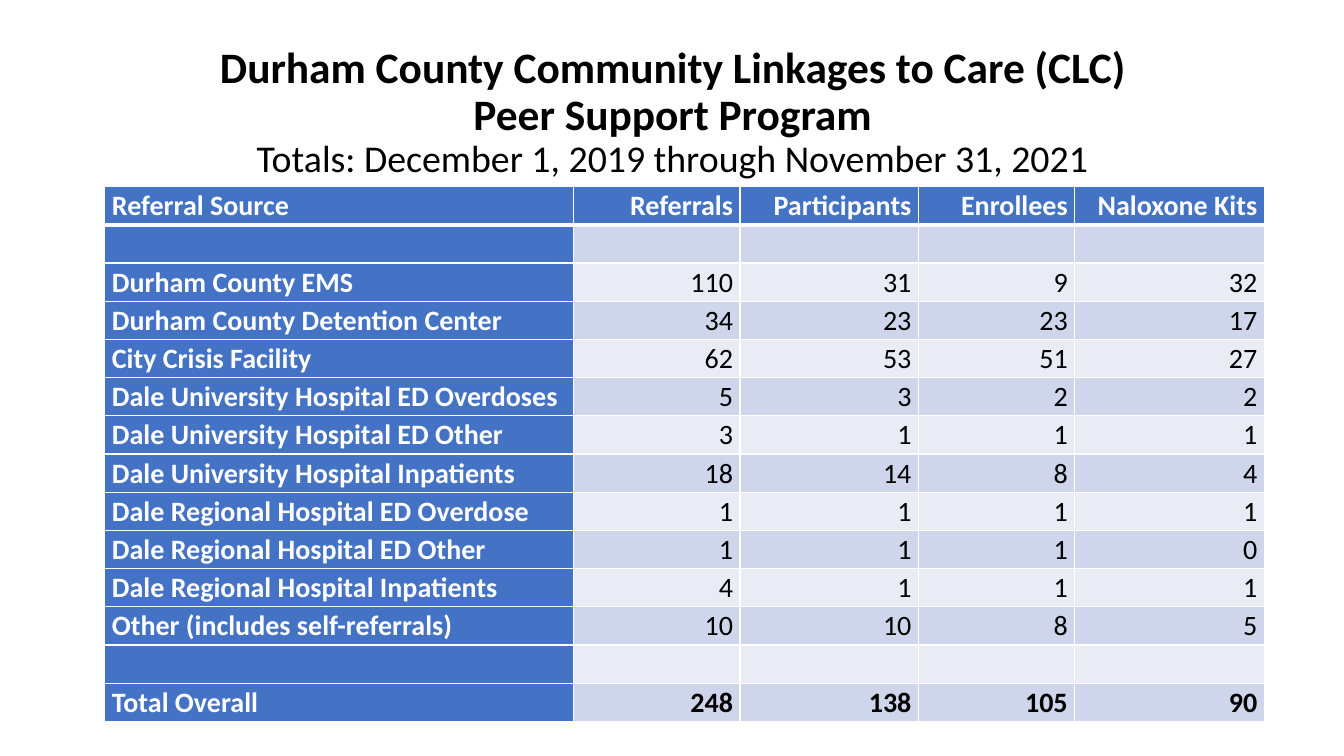
from dataclasses import dataclass

from lxml.etree import SubElement
from pptx import Presentation
from pptx.dml.color import RGBColor
from pptx.enum.text import MSO_ANCHOR, PP_ALIGN
from pptx.oxml.ns import qn
from pptx.util import Inches, Pt


@dataclass(frozen=True)
class Theme:
    """Colours, font and type sizes of the slide."""
    font: str = "Calibri"
    ink: str = "000000"
    paper: str = "FFFFFF"
    accent: str = "4472C4"
    bands: tuple = ("CFD5EA", "E9EBF5")
    heading: int = 31
    period: int = 27
    body: int = 20
    rule: int = 1
    header_rule: int = 3


THEME = Theme()
SLIDE_SIZE = (13.33, 7.5)
TITLE_BOX = (0.92, 0.4, 11.5, 1.45)
TABLE_BOX = (1.04, 1.85, 11.5, 5.31)
COLUMN_WIDTHS = (4.65, 1.65, 1.77, 1.55, 1.88)

TITLE_LINES = (
    ("Durham County Community Linkages to Care (CLC)", THEME.heading, True),
    ("Peer Support Program", THEME.heading, True),
    ("Totals: December 1, 2019 through November 31, 2021", THEME.period, False),
)
SPACER = ("",) * len(COLUMN_WIDTHS)
REFERRALS = (
    ("Referral Source", "Referrals", "Participants", "Enrollees", "Naloxone Kits"),
    SPACER,
    ("Durham County EMS", 110, 31, 9, 32),
    ("Durham County Detention Center", 34, 23, 23, 17),
    ("City Crisis Facility", 62, 53, 51, 27),
    ("Dale University Hospital ED Overdoses", 5, 3, 2, 2),
    ("Dale University Hospital ED Other", 3, 1, 1, 1),
    ("Dale University Hospital Inpatients", 18, 14, 8, 4),
    ("Dale Regional Hospital ED Overdose", 1, 1, 1, 1),
    ("Dale Regional Hospital ED Other", 1, 1, 1, 0),
    ("Dale Regional Hospital Inpatients", 4, 1, 1, 1),
    ("Other (includes self-referrals)", 10, 10, 8, 5),
    SPACER,
    ("Total Overall", 248, 138, 105, 90),
)


def style_paragraph(paragraph, size, color, bold, align, spacing):
    """Set the font, alignment and line spacing of a paragraph."""
    font = paragraph.font
    font.name, font.size, font.bold = THEME.font, Pt(size), bold
    font.color.rgb = RGBColor.from_string(color)
    paragraph.alignment, paragraph.line_spacing = align, spacing


def add_title(slide, box):
    """Place the programme name and its period, centred in the box."""
    frame = slide.shapes.add_textbox(*map(Inches, box)).text_frame
    frame.word_wrap = True
    frame.vertical_anchor = MSO_ANCHOR.MIDDLE
    for index, (line, size, bold) in enumerate(TITLE_LINES):
        paragraph = frame.add_paragraph() if index else frame.paragraphs[0]
        paragraph.text = line
        style_paragraph(paragraph, size, THEME.ink, bold, PP_ALIGN.CENTER, 0.9)


def add_borders(cell, top, bottom):
    """Rule the four sides of a cell, before its fill is set."""
    sides = {"L": THEME.rule, "R": THEME.rule, "T": top, "B": bottom}
    for side, width in sides.items():
        line = SubElement(cell._tc.get_or_add_tcPr(), qn(f"a:ln{side}"), w=str(Pt(width)))
        SubElement(SubElement(line, qn("a:solidFill")), qn("a:srgbClr"), val=THEME.paper)


def fill_cell(cell, value, row, column):
    """Write and style one cell by its place in the table."""
    is_header, is_label = row == 0, column == 0
    is_accent = is_header or is_label
    is_total = row == len(REFERRALS) - 1
    add_borders(cell, THEME.header_rule if row == 1 else THEME.rule,
                THEME.header_rule if is_header else THEME.rule)
    cell.fill.solid()
    cell.fill.fore_color.rgb = RGBColor.from_string(
        THEME.accent if is_accent else THEME.bands[(row - 1) % 2])
    cell.margin_left = cell.margin_right = Inches(0.07)
    cell.margin_top = cell.margin_bottom = 0
    cell.text = str(value)
    style_paragraph(cell.text_frame.paragraphs[0], THEME.body,
                    THEME.paper if is_accent else THEME.ink, is_accent or is_total,
                    PP_ALIGN.LEFT if is_label else PP_ALIGN.RIGHT, 1.07)


def add_referral_table(slide, box):
    """Place the referral counts in equal rows that fill the box."""
    table = slide.shapes.add_table(
        len(REFERRALS), len(COLUMN_WIDTHS), *map(Inches, box)).table
    table.first_col = True
    for column, width in zip(table.columns, COLUMN_WIDTHS):
        column.width = Inches(box[2] * width / sum(COLUMN_WIDTHS))
    for row, values in enumerate(REFERRALS):
        table.rows[row].height = Inches(box[3] / len(REFERRALS))
        for column, value in enumerate(values):
            fill_cell(table.cell(row, column), value, row, column)


def main():
    """Build the slide and save it."""
    deck = Presentation()
    deck.slide_width, deck.slide_height = map(Inches, SLIDE_SIZE)
    slide = deck.slides.add_slide(deck.slide_layouts[6])
    add_title(slide, TITLE_BOX)
    add_referral_table(slide, TABLE_BOX)
    deck.save("out.pptx")


if __name__ == "__main__":
    main()
